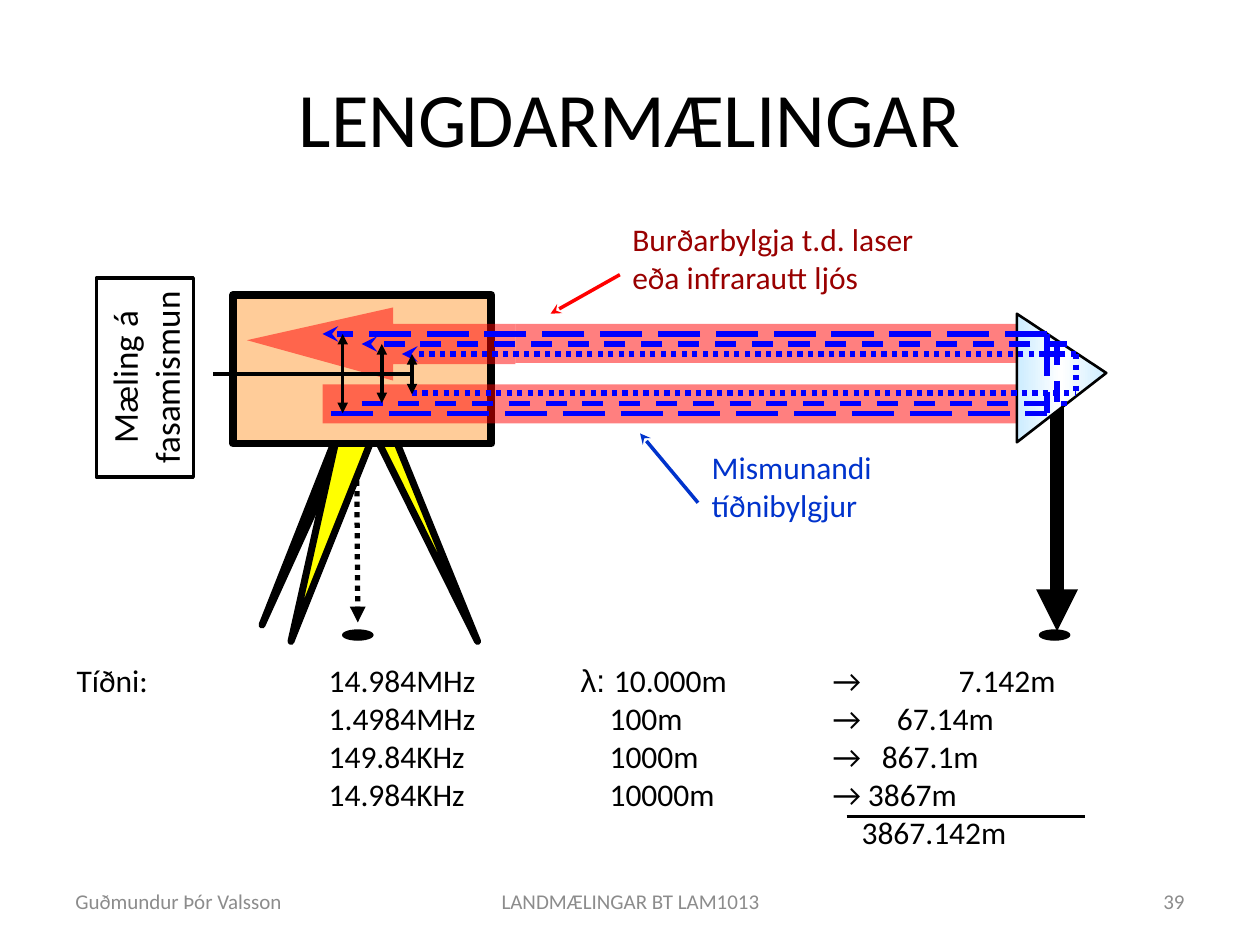
"""Builds the slide on electronic distance measurement."""
from copy import deepcopy
from lxml import etree
from pptx import Presentation
from pptx.dml.color import RGBColor
from pptx.enum.dml import MSO_LINE
from pptx.enum.shapes import MSO_CONNECTOR, MSO_SHAPE
from pptx.enum.text import MSO_ANCHOR, PP_ALIGN
from pptx.oxml.ns import qn
from pptx.util import Inches, Pt

BLACK = RGBColor(0, 0, 0)
WHITE = RGBColor(255, 255, 255)
GREY = RGBColor(0x8C, 0x8C, 0x8C)
YELLOW = RGBColor(255, 255, 0)
PEACH = RGBColor(0xFF, 0xCC, 0x99)
RED = RGBColor(255, 0, 0)
MAROON = RGBColor(0x99, 0, 0)
BLUE = RGBColor(0, 0, 255)
NAVY = RGBColor(0, 0x33, 0xCC)
ICE = RGBColor(0xCC, 0xEC, 0xFF)

RECT, OVAL = MSO_SHAPE.RECTANGLE, MSO_SHAPE.OVAL
STRAIGHT = MSO_CONNECTOR.STRAIGHT
DOT, DASH, LONG = MSO_LINE.ROUND_DOT, MSO_LINE.DASH, MSO_LINE.LONG_DASH
LEFT, MID, RIGHT = PP_ALIGN.LEFT, PP_ALIGN.CENTER, PP_ALIGN.RIGHT
MIDDLE = MSO_ANCHOR.MIDDLE


class Board:
    """Holds the style and the current slide."""

    font = "Calibri"

    def __init__(self, deck):
        self.slide = deck.slides.add_slide(deck.slide_layouts[5])
        self.shapes = self.slide.shapes

    def style(self, para, size, color, align=LEFT):
        para.alignment = align
        para.font.name = self.font
        para.font.size = Pt(size)
        para.font.color.rgb = color

    def title(self, text):
        box = self.shapes.title
        box.left, box.top = Inches(0.5), Inches(0.3)
        box.width, box.height = Inches(9), Inches(1.25)
        box.text_frame.text = text
        self.style(box.text_frame.paragraphs[0], 44, BLACK, MID)

    def text(self, text, at, size, color, align=LEFT, wrap=False):
        box = self.shapes.add_textbox(*map(Inches, at))
        frame = box.text_frame
        frame.word_wrap = wrap
        frame.text = text
        for para in frame.paragraphs:
            self.style(para, size, color, align)
        return frame

    def paint(self, shape, fill, width=0, alpha=100):
        shape.shadow.inherit = False
        shape.fill.solid()
        shape.fill.fore_color.rgb = fill
        if alpha < 100:
            tone = shape.element.spPr.find(".//" + qn("a:srgbClr"))
            etree.SubElement(tone, qn("a:alpha"), val=str(alpha * 1000))
        if width:
            shape.line.color.rgb = BLACK
            shape.line.width = Pt(width)
        else:
            shape.line.fill.background()
        return shape

    def shape(self, kind, at, fill, width=0, alpha=100):
        shape = self.shapes.add_shape(kind, *map(Inches, at))
        return self.paint(shape, fill, width, alpha)

    def free(self, points, fill, width=0, alpha=100):
        spots = [(Inches(x), Inches(y)) for x, y in points]
        pen = self.shapes.build_freeform(*spots[0])
        pen.add_line_segments(spots[1:], close=True)
        shape = self.paint(pen.convert_to_shape(), fill, width, alpha)
        if width:
            etree.SubElement(shape.line._get_or_add_ln(), qn("a:round"))
        return shape

    def prism(self, points):
        shape = self.free(points, ICE, 1.5)
        shape.fill.gradient()
        shape.fill.gradient_angle = 0
        stops = shape.fill.gradient_stops
        for stop, tone, place in zip(stops, (ICE, WHITE), (0, 0.5)):
            stop.color.rgb = tone
            stop.position = place
        group = shape.element.spPr.find(".//" + qn("a:gsLst"))
        last = deepcopy(group[0])
        last.set("pos", "100000")
        group.append(last)

    def line(self, start, end, color, width, dash=None, tip=None, both=False):
        line = self.shapes.add_connector(STRAIGHT, *map(Inches, start + end))
        line.line.color.rgb = color
        line.line.width = Pt(width)
        if dash:
            line.line.dash_style = dash
        stroke = line.line._get_or_add_ln()
        if both:
            etree.SubElement(stroke, qn("a:headEnd"), type=tip)
        if tip:
            etree.SubElement(stroke, qn("a:tailEnd"), type=tip)
        etree.SubElement(line.element.spPr, qn("a:effectLst"))

    def rows(self, rows, at):
        frame = self.text("\n".join("\t".join(row) for row, _ in rows),
                          at, 18, BLACK, wrap=True)
        for para, (_, stops) in zip(frame.paragraphs, rows):
            tabs = etree.Element(qn("a:tabLst"))
            for stop in stops:
                etree.SubElement(tabs, qn("a:tab"), pos=str(Inches(stop)), algn="l")
            para.font._element.addprevious(tabs)
        return frame


def station(board):
    board.line((2.83, 3.53), (2.84, 4.94), BLACK, 3, DOT, "triangle", True)
    for leg in (
        [(2.97, 3.44), (3.79, 5.09), (3.12, 3.44)],
        [(2.68, 3.44), (2.97, 3.44), (2.31, 5.09)],
        [(2.68, 3.44), (2.08, 4.96), (2.53, 3.97)],
    ):
        board.free(leg, YELLOW, 4)
    board.shape(RECT, (1.85, 2.34, 2.05, 1.18), PEACH, 4.5)


def beams(board):
    board.shape(RECT, (4.09, 2.57, 4.06, 0.31), RED, alpha=50)
    board.shape(RECT, (2.56, 3.05, 5.51, 0.31), RED, alpha=50)
    board.line((8.39, 2.96), (8.39, 5.01), BLACK, 8, tip="triangle")
    board.prism([(8.07, 2.49), (8.07, 3.51), (8.78, 2.96)])
    for left in (2.72, 8.25):
        board.shape(OVAL, (left, 5, 0.24, 0.08), BLACK, 0.75)
    board.free([(4.09, 2.57), (3.12, 2.57), (3.12, 2.44), (1.96, 2.7),
                (3.12, 3.02), (3.12, 2.89), (4.09, 2.89)], RED, alpha=50)
    waves = (
        (2.63, 2.56, 8.31, 8.31, 2.65, 3.28, LONG),
        (2.87, 2.87, 8.47, 8.39, 2.73, 3.2, DASH),
        (3.27, 3.19, 8.54, 8.54, 2.81, 3.12, DOT),
    )
    for out, back, right, turn, top, low, dash in waves:
        board.line((out, low), (right, low), BLUE, 3, dash)
        board.line((turn, top), (turn, low), BLUE, 3, dash)
        board.line((right, top), (back, top), BLUE, 3, dash, "stealth")
    for x, top, low in ((2.72, 2.65, 3.28), (3.03, 2.73, 3.2), (3.27, 2.81, 3.13)):
        board.line((x, top), (x, low), BLACK, 2, tip="triangle", both=True)
    board.line((3.27, 2.97), (1.69, 2.97), BLACK, 2)


def labels(board):
    board.text("Burðarbylgja t.d. laser\neða infrarautt ljós",
               (4.92, 1.7, 2.51, 0.71), 18, MAROON)
    board.line((4.92, 2.18), (4.37, 2.49), RED, 2, tip="stealth")
    board.text("Mismunandi\ntíðnibylgjur", (5.55, 3.51, 1.55, 0.71), 18, NAVY)
    board.line((5.54, 3.99), (5.08, 3.44), NAVY, 2, tip="stealth")
    phase = board.shape(RECT, (0.36, 2.61, 1.58, 0.77), WHITE, 2, 47)
    phase.rotation = 270
    phase.text_frame.word_wrap = False
    phase.text_frame.text = "Mæling á\nfasamismun"
    for para in phase.text_frame.paragraphs:
        board.style(para, 20, BLACK, MID)


def sums(board):
    rows = [
        (("Tíðni:", "14.984MHz", "λ: ", "→", "7.142m"), (2, 4, 6, 7)),
        (("", "1.4984MHz", "100m", "→", "67.14m"), (2, 4.23, 6, 6.51)),
        (("", "149.84KHz", "1000m", "→", "867.1m"), (2, 4.23, 6, 6.39)),
        (("", "14.984KHz", "10000m", "→", "3867m"), (2, 4.23, 6, 6.28)),
        (("", "3867.142m"), (6.23,)),
    ]
    para = board.rows(rows, (0.51, 5.2, 8.05, 1.62)).paragraphs[0]
    para.clear()
    for part, font in (("Tíðni:\t14.984MHz\t", "Calibri"), ("λ: ", "Arial"),
                       ("10.000m\t→\t7.142m", "Calibri")):
        run = para.add_run()
        run.text = part
        run.font.name = font
    board.line((6.72, 6.48), (8.61, 6.48), BLACK, 2)


def main():
    deck = Presentation()
    deck.slide_width, deck.slide_height = Inches(10), Inches(7.5)
    board = Board(deck)
    board.title("LENGDARMÆLINGAR")
    for text, left, width, align in (
        ("Guðmundur Þór Valsson", 0.5, 2.33, LEFT),
        ("LANDMÆLINGAR BT LAM1013", 3.42, 3.17, MID),
        ("39", 7.17, 2.33, RIGHT),
    ):
        foot = board.text(text, (left, 6.95, width, 0.4), 12, GREY, align, True)
        foot.vertical_anchor = MIDDLE
    station(board)
    beams(board)
    labels(board)
    sums(board)
    deck.save("out.pptx")


if __name__ == "__main__":
    main()
